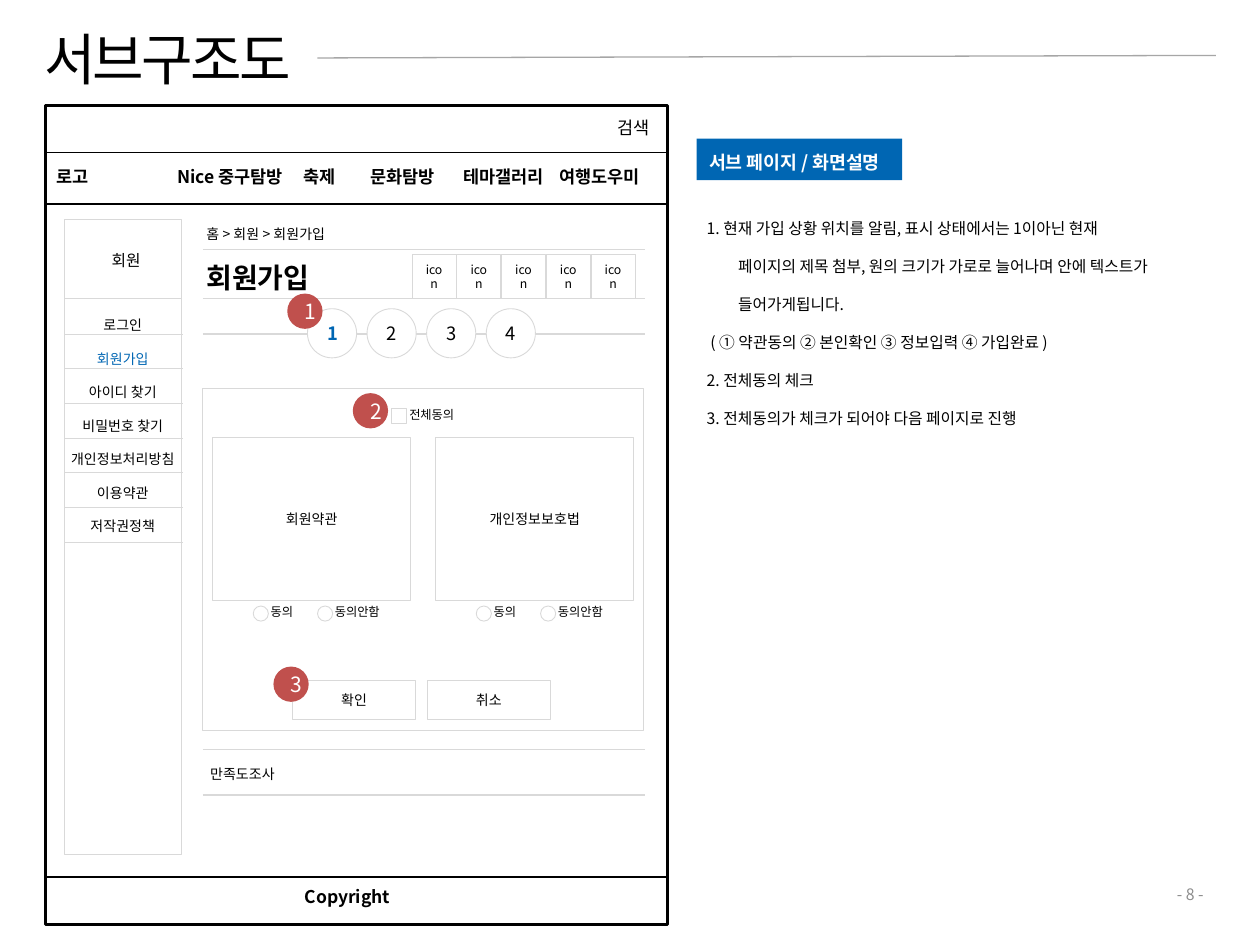
from dataclasses import dataclass
from typing import Optional

from lxml import etree
from pptx import Presentation
from pptx import util as u
from pptx.dml.color import RGBColor
from pptx.enum import shapes, text
from pptx.oxml.ns import qn

RECT, OVAL = shapes.MSO_SHAPE.RECTANGLE, shapes.MSO_SHAPE.OVAL
LEFT, CENTER, RIGHT = text.PP_ALIGN.LEFT, text.PP_ALIGN.CENTER, text.PP_ALIGN.RIGHT
TOP, MIDDLE = text.MSO_ANCHOR.TOP, text.MSO_ANCHOR.MIDDLE


@dataclass(frozen=True)
class Theme:
    font: str = "Noto Sans CJK KR"
    black: str = "000000"
    white: str = "FFFFFF"
    blue: str = "0066B3"
    red: str = "C0504D"
    border: str = "D9D9D9"
    rule: str = "A6A6A6"
    page: str = "8C8C8C"
    title: float = 32
    heading: float = 16
    badge: float = 12
    step: float = 10.5
    menu: float = 10
    body: float = 9
    small: float = 8
    tiny: float = 7


T = Theme()


@dataclass
class Label:
    x: float
    y: float
    w: float
    h: float
    words: str
    size: float = T.small
    color: str = T.black
    bold: bool = False
    align: text.PP_ALIGN = LEFT
    anchor: text.MSO_ANCHOR = TOP
    spacing: Optional[float] = None


@dataclass
class Box:
    x: float
    y: float
    w: float
    h: float
    words: str = ""
    kind: shapes.MSO_SHAPE = RECT
    fill: Optional[str] = None
    line: Optional[str] = T.border
    weight: float = 0.5
    size: float = T.small
    color: str = T.black
    bold: bool = False
    align: text.PP_ALIGN = CENTER
    anchor: text.MSO_ANCHOR = MIDDLE
    spacing: Optional[float] = None


def rgb(value: str) -> RGBColor:
    return RGBColor.from_string(value)


def style_run(r, size: float, color: str, bold: bool = False) -> None:
    r.font.size, r.font.bold = u.Pt(size), bold
    r.font.name = T.font
    r.font.color.rgb = rgb(color)
    ea = etree.SubElement(r._r.get_or_add_rPr(), qn("a:ea"))
    ea.set("typeface", T.font)


def write(sp, item) -> None:
    tf = sp.text_frame
    tf.text = item.words
    tf.word_wrap = True
    tf.vertical_anchor = item.anchor
    for p in tf.paragraphs:
        p.alignment = item.align
        if item.spacing:
            p.line_spacing = item.spacing
        for r in p.runs:
            style_run(r, item.size, item.color, item.bold)


def place(item) -> list:
    return [u.Inches(v) for v in (item.x, item.y, item.w, item.h)]


def add_label(s, item: Label):
    sp = s.shapes.add_textbox(*place(item))
    write(sp, item)
    return sp


def add_box(s, item: Box):
    sp = s.shapes.add_shape(item.kind, *place(item))
    sp.shadow.inherit = False
    if item.fill:
        sp.fill.solid()
        sp.fill.fore_color.rgb = rgb(item.fill)
    else:
        sp.fill.background()
    if item.line:
        sp.line.color.rgb = rgb(item.line)
        sp.line.width = u.Pt(item.weight)
    else:
        sp.line.fill.background()
    if item.words:
        write(sp, item)
    return sp


def add_line(s, x1: float, y1: float, x2: float, y2: float,
             color: str = T.border, weight: float = 0.75) -> None:
    ends = [u.Inches(v) for v in (x1, y1, x2, y2)]
    line = s.shapes.add_connector(shapes.MSO_CONNECTOR.STRAIGHT, *ends)
    line.line.color.rgb = rgb(color)
    line.line.width = u.Pt(weight)
    etree.SubElement(line._element.spPr, qn("a:effectLst"))


def add_title(s) -> None:
    sp = s.shapes.title
    item = Label(0.25, 0.14, 2.27, 0.64, "서브구조도", T.title, anchor=MIDDLE)
    sp.left, sp.top, sp.width, sp.height = place(item)
    write(sp, item)
    sp.text_frame.paragraphs[0].runs[0]._r.get_or_add_rPr().set("spc", "-150")
    add_line(s, 2.52, 0.46, 9.65, 0.44, T.rule)
    add_label(s, Label(8.43, 6.98, 1.22, 0.24, "- 8 -", T.body, T.page,
                       align=RIGHT, anchor=MIDDLE))


def add_frame(s) -> None:
    # Page outline, header and footer
    add_box(s, Box(0.36, 0.84, 4.94, 6.5, fill=T.white, line=T.black, weight=1.5))
    for y in (1.21, 1.62, 6.96):
        add_line(s, 0.36, y, 5.29, y, T.black)
    add_label(s, Label(4.8, 0.88, 0.46, 0.27, "검색", T.menu))
    add_label(s, Label(0.35, 1.27, 0.53, 0.31, "로고", T.menu, bold=True))
    add_label(s, Label(2.32, 6.98, 0.95, 0.31, "Copyright", T.menu, bold=True))

    # Main menu on tab stops
    items = ["Nice 중구탐방", "축제", "문화탐방", "테마갤러리", "여행도우미"]
    menu = add_label(s, Label(1.31, 1.27, 3.97, 0.27, "\t".join(items), T.menu, bold=True))
    pPr = menu.text_frame.paragraphs[0]._p.get_or_add_pPr()
    tabs = etree.SubElement(pPr, qn("a:tabLst"))
    for stop in (1, 1.53, 2.27, 3.03):
        etree.SubElement(tabs, qn("a:tab"), pos=str(u.Inches(stop)), algn="l")


def add_sidebar(s) -> None:
    add_box(s, Box(0.51, 1.74, 0.93, 0.63))
    add_label(s, Label(0.54, 1.94, 0.92, 0.25, "회원", T.body, align=CENTER))
    add_box(s, Box(0.51, 2.37, 0.93, 4.41))
    links = ["로그인", "회원가입", "아이디 찾기", "비밀번호 찾기",
             "개인정보처리방침", "이용약관", "저작권정책"]
    sp = add_label(s, Label(0.42, 2.33, 1.11, 1.99, "\n".join(links),
                            align=CENTER, spacing=2.0))
    sp.text_frame.paragraphs[1].runs[0].font.color.rgb = rgb(T.blue)
    for i in range(len(links)):
        y = 2.65 + 0.275 * i
        add_line(s, 0.51, y, 1.45, y, weight=0.25)


def add_content(s) -> None:
    # Breadcrumb, heading and survey strip
    for y in (1.98, 2.37, 2.65, 5.95, 6.31):
        add_line(s, 1.61, y, 5.12, y)
    add_label(s, Label(1.54, 1.74, 1.19, 0.24, "홈 > 회원 > 회원가입"))
    add_label(s, Label(1.54, 2.02, 1.38, 0.37, "회원가입", T.heading, bold=True))
    add_label(s, Label(1.57, 6.03, 0.73, 0.24, "만족도조사"))
    for i in range(5):
        add_box(s, Box(3.27 + 0.355 * i, 2.02, 0.35, 0.35, "icon", size=T.tiny))

    # Step circles
    for i in range(4):
        active = i == 0
        add_box(s, Box(2.44 + 0.473 * i, 2.45, 0.39, 0.39, str(i + 1), OVAL, T.white,
                       size=T.step, color=T.blue if active else T.black, bold=active))

    # Agreement panel
    add_box(s, Box(1.61, 3.08, 3.5, 2.72))
    add_box(s, Box(3.11, 3.24, 0.12, 0.12))
    add_label(s, Label(3.15, 3.18, 0.57, 0.22, "전체동의", T.tiny))
    for x, name in ((1.69, "회원약관"), (3.46, "개인정보보호법")):
        add_box(s, Box(x, 3.47, 1.57, 1.3, name))
        for dx, w, choice in ((0.32, 0.39, "동의"), (0.83, 0.57, "동의안함")):
            add_box(s, Box(x + dx, 4.81, 0.12, 0.12, kind=OVAL))
            add_label(s, Label(x + dx + 0.04, 4.75, w, 0.22, choice, T.tiny))
    for x, name in ((2.32, "확인"), (3.39, "취소")):
        add_box(s, Box(x, 5.4, 0.98, 0.31, name))

    # Numbered callouts
    for n, (x, y) in enumerate(((2.28, 2.33), (2.8, 3.12), (2.17, 5.29)), 1):
        add_box(s, Box(x, y, 0.28, 0.28, str(n), OVAL, T.red, None,
                       size=T.badge, color=T.white))


def add_description(s) -> None:
    add_box(s, Box(5.53, 1.1, 1.63, 0.33, "서브 페이지 / 화면설명", fill=T.blue, line=None,
                   size=T.step, color=T.white, bold=True, align=LEFT, anchor=TOP, spacing=1.3))
    notes = ["1. 현재 가입 상황 위치를 알림, 표시 상태에서는 1이아닌 현재 페이지의 제목 첨부, "
             "원의 크기가 가로로 늘어나며 안에 텍스트가 들어가게됩니다.",
             "( ① 약관동의 ② 본인확인 ③ 정보입력 ④ 가입완료 )",
             "2. 전체동의 체크",
             "3. 전체동의가 체크가 되어야 다음 페이지로 진행"]
    sp = add_label(s, Label(5.51, 1.54, 3.77, 1.92, "\n".join(notes), T.body, spacing=2.0))
    for p, first in zip(sp.text_frame.paragraphs, (-0.25, -0.22, -0.25, -0.25)):
        pPr = p._p.get_or_add_pPr()
        pPr.set("marL", str(u.Inches(0.25)))
        pPr.set("indent", str(u.Inches(first)))


def main() -> None:
    prs = Presentation()
    prs.slide_width, prs.slide_height = u.Inches(10), u.Inches(7.5)
    s = prs.slides.add_slide(prs.slide_layouts[5])
    for part in (add_title, add_frame, add_sidebar, add_content, add_description):
        part(s)
    prs.save("out.pptx")


if __name__ == "__main__":
    main()
